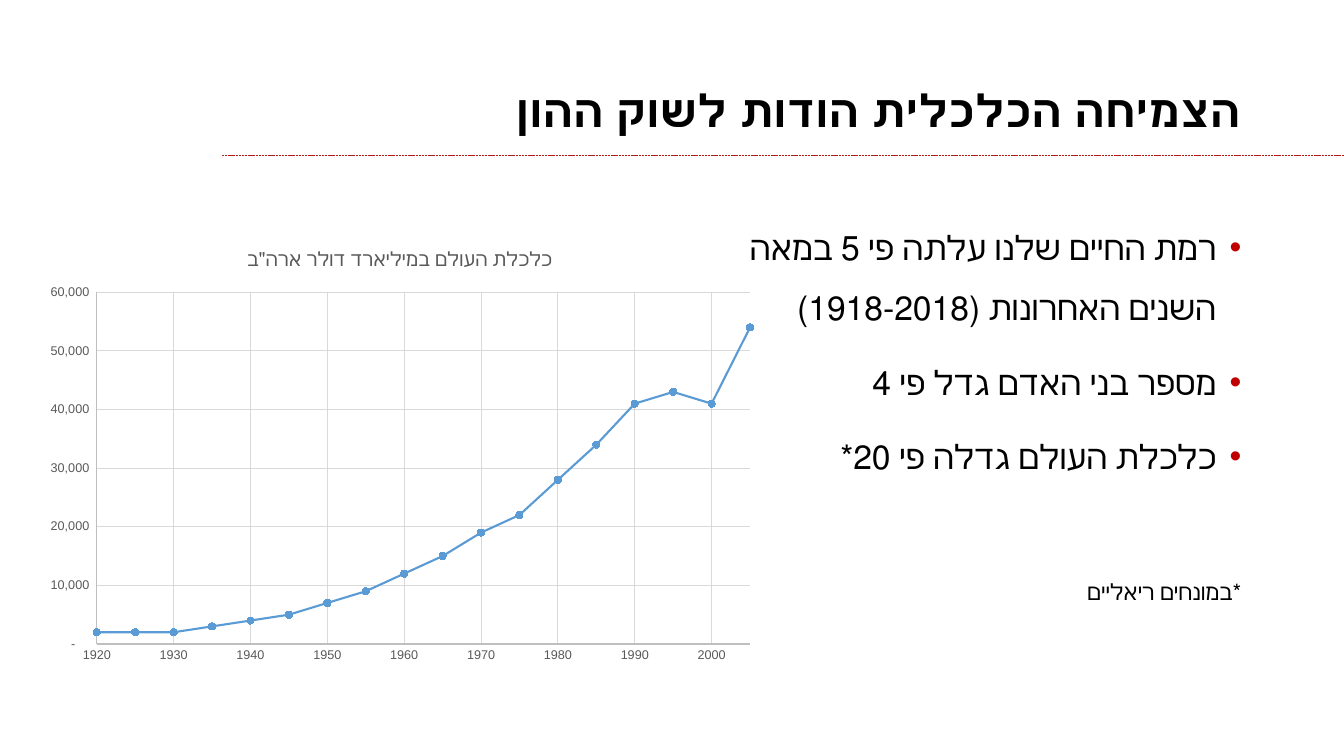
from dataclasses import dataclass

from lxml.etree import SubElement
from pptx import Presentation
from pptx.chart.data import XyChartData
from pptx.dml.color import RGBColor
from pptx.enum.chart import XL_CHART_TYPE, XL_MARKER_STYLE, XL_TICK_MARK
from pptx.enum.dml import MSO_LINE
from pptx.enum.shapes import MSO_CONNECTOR
from pptx.enum.text import MSO_ANCHOR, PP_ALIGN
from pptx.oxml.ns import qn
from pptx.util import Inches, Pt


@dataclass(frozen=True)
class Theme:
    font: str = "Arial"
    ink: RGBColor = RGBColor(0, 0, 0)
    rule: RGBColor = RGBColor(0xB0, 0x1A, 0x1A)
    bullet: str = "C00000"
    label: RGBColor = RGBColor(0x59, 0x59, 0x59)
    axis: RGBColor = RGBColor(0xBF, 0xBF, 0xBF)
    grid: RGBColor = RGBColor(0xD9, 0xD9, 0xD9)
    series: RGBColor = RGBColor(0x5B, 0x9B, 0xD5)
    title_size: int = 32
    body_size: int = 24
    note_size: int = 16
    chart_title_size: int = 14
    chart_size: int = 10
    axis_size: int = 9


THEME = Theme()
TITLE = "הצמיחה הכלכלית הודות לשוק ההון"
POINTS = [
    "רמת החיים שלנו עלתה פי 5 במאה השנים האחרונות (1918-2018)",
    "מספר בני האדם גדל פי 4",
    "כלכלת העולם גדלה פי 20*",
]
NOTE = "*במונחים ריאליים"
CHART_TITLE = 'כלכלת העולם במיליארד דולר ארה"ב'
FIRST_YEAR, LAST_YEAR, YEAR_STEP = 1920, 2005, 5
# Newest year first
WORLD_ECONOMY = [54000, 41000, 43000, 41000, 34000, 28000, 22000, 19000, 15000,
                 12000, 9000, 7000, 5000, 4000, 3000, 2000, 2000, 2000]
NUMBER_FORMAT = '_ * #,##0_ ;_ * -#,##0_ ;_ * "-"??_ ;_ @_ '


def style_font(font, size, color, bold=False):
    font.name = THEME.font
    font.size = Pt(size)
    font.bold = bold
    font.color.rgb = color


def add_text_frame(page, box, anchor):
    frame = page.shapes.add_textbox(*map(Inches, box)).text_frame
    frame.word_wrap = True
    frame.vertical_anchor = anchor
    return frame


def fill_hebrew(para, text, size, spacing, before=0, bold=False, bullet=False):
    """Write right-to-left text into a paragraph, with an optional hanging bullet."""
    para.text = text
    para.alignment = PP_ALIGN.RIGHT
    para.line_spacing = spacing
    para.space_before = Pt(before)
    properties = para._p.get_or_add_pPr()
    properties.set("rtl", "1")
    if bullet:
        indent = Inches(0.25)
        properties.set("marL", str(indent))
        properties.set("indent", str(-indent))
        color = SubElement(properties, qn("a:buClr"))
        SubElement(color, qn("a:srgbClr"), val=THEME.bullet)
        SubElement(properties, qn("a:buFont"), typeface=THEME.font)
        SubElement(properties, qn("a:buChar"), char="•")
    style_font(para.font, size, THEME.ink, bold)


def add_title(page, box):
    frame = add_text_frame(page, box, MSO_ANCHOR.MIDDLE)
    fill_hebrew(frame.paragraphs[0], TITLE, THEME.title_size, 0.9, bold=True)


def add_title_rule(page, left, top, right):
    rule = page.shapes.add_connector(
        MSO_CONNECTOR.STRAIGHT, *map(Inches, (left, top, right, top)))
    rule.line.color.rgb = THEME.rule
    rule.line.width = Pt(0.5)
    rule.line.dash_style = MSO_LINE.SQUARE_DOT
    SubElement(rule._element.spPr, qn("a:effectLst"))


def add_points(page, box):
    frame = add_text_frame(page, box, MSO_ANCHOR.TOP)
    for index, point in enumerate(POINTS):
        para = frame.add_paragraph() if index else frame.paragraphs[0]
        fill_hebrew(para, point, THEME.body_size, 1.5,
                    before=10 if index else 0, bullet=True)
    fill_hebrew(frame.add_paragraph(), NOTE, THEME.note_size, 1.5, before=63)


def style_axis(axis, low, high, step):
    axis.minimum_scale, axis.maximum_scale, axis.major_unit = low, high, step
    axis.major_tick_mark = axis.minor_tick_mark = XL_TICK_MARK.NONE
    axis.has_major_gridlines = True
    for line, color in ((axis.format.line, THEME.axis),
                        (axis.major_gridlines.format.line, THEME.grid)):
        line.color.rgb = color
        line.width = Pt(0.75)
    style_font(axis.tick_labels.font, THEME.axis_size, THEME.label)


def place_plot(chart, size, box):
    """Fix the inner plot area at a box in inches within a chart of the given size."""
    plot_area = chart._chartSpace.chart.plotArea
    layout = plot_area.find(qn("c:layout"))
    if layout is None:
        layout = SubElement(plot_area, qn("c:layout"))
        plot_area.insert(0, layout)
    manual = SubElement(layout, qn("c:manualLayout"))
    settings = {"layoutTarget": "inner", "xMode": "edge", "yMode": "edge"}
    for name, length, whole in zip("xywh", box, size * 2):
        settings[name] = length / whole
    for name, value in settings.items():
        SubElement(manual, qn(f"c:{name}"), val=str(value))


def add_growth_chart(page, box):
    chart_data = XyChartData()
    growth = chart_data.add_series(CHART_TITLE)
    years = range(LAST_YEAR, FIRST_YEAR - 1, -YEAR_STEP)
    for year, value in zip(years, WORLD_ECONOMY):
        growth.add_data_point(year, value)
    chart = page.shapes.add_chart(
        XL_CHART_TYPE.XY_SCATTER_LINES, *map(Inches, box), chart_data).chart
    style_font(chart.font, THEME.chart_size, THEME.ink)
    chart.has_legend = False
    chart.has_title = True
    title = chart.chart_title.text_frame.paragraphs[0]
    title.text = CHART_TITLE
    title._p.get_or_add_pPr().set("rtl", "1")
    style_font(title.font, THEME.chart_title_size, THEME.label)
    place_plot(chart, box[2:], (0.63, 0.61, 6.48, 3.49))

    style_axis(chart.category_axis, FIRST_YEAR, LAST_YEAR, 10)
    style_axis(chart.value_axis, 0, 60000, 10000)
    labels = chart.value_axis.tick_labels
    labels.number_format = NUMBER_FORMAT
    labels.number_format_is_linked = False

    chart.plots[0].vary_by_categories = False
    series = chart.plots[0].series[0]
    series.smooth = False
    series.format.line.color.rgb = THEME.series
    series.format.line.width = Pt(1.5)
    series.marker.style = XL_MARKER_STYLE.CIRCLE
    series.marker.size = 5
    series.marker.format.fill.solid()
    series.marker.format.fill.fore_color.rgb = THEME.series
    series.marker.format.line.color.rgb = THEME.series


def main():
    deck = Presentation()
    deck.slide_width, deck.slide_height = Inches(13.33), Inches(7.5)
    page = deck.slides.add_slide(deck.slide_layouts[6])
    add_title_rule(page, 2.2, 1.54, 13.33)
    add_title(page, (0.91, 0.4, 11.5, 1.45))
    add_points(page, (6.82, 2, 5.59, 4.76))
    add_growth_chart(page, (0.33, 2.29, 7.27, 4.38))
    deck.save("out.pptx")


if __name__ == "__main__":
    main()
